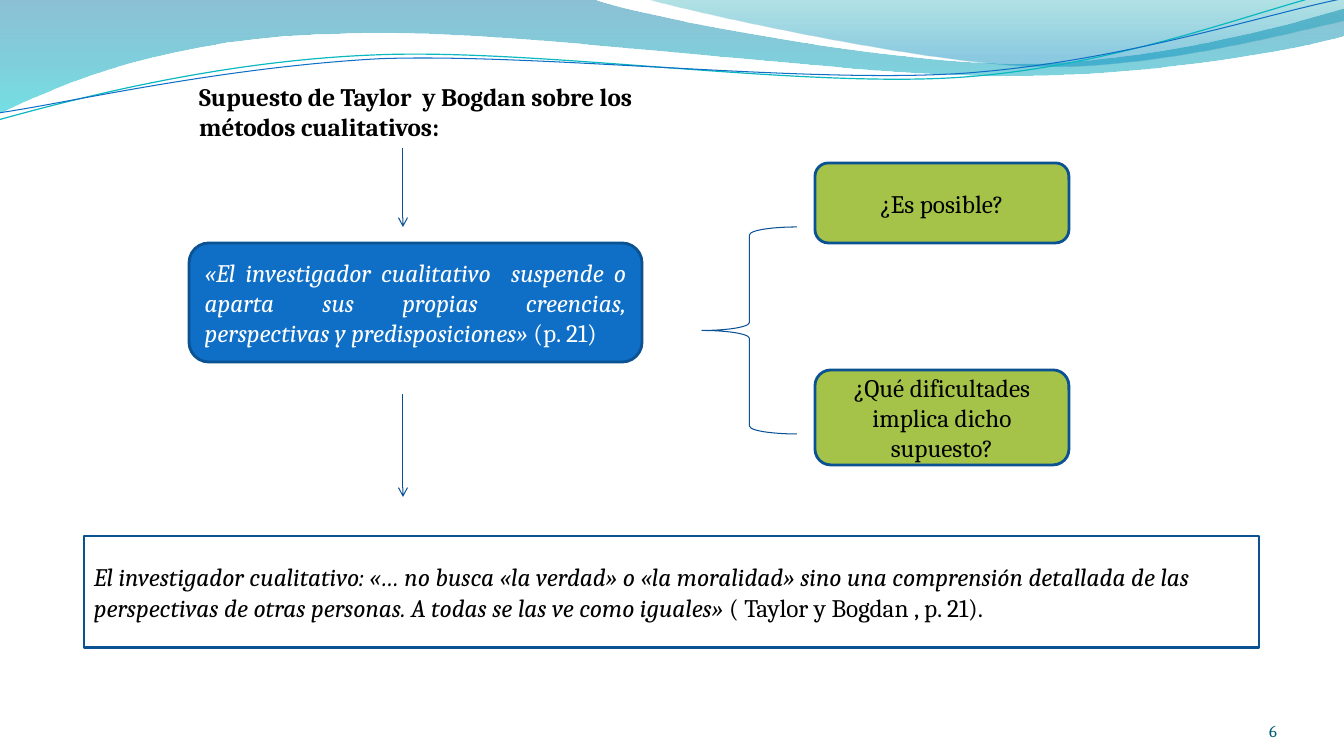
from pptx import Presentation
from pptx.dml.color import RGBColor
from pptx.enum.shapes import MSO_CONNECTOR, MSO_SHAPE
from pptx.enum.text import MSO_ANCHOR, MSO_AUTO_SIZE, PP_ALIGN
from pptx.oxml.ns import qn
from pptx.util import Pt
from lxml.etree import SubElement

PX = 914400 / 100.8
FONT = "Cambria"
BLACK = RGBColor(0x00, 0x00, 0x00)
WHITE = RGBColor(0xFF, 0xFF, 0xFF)
BLUE = RGBColor(0x0F, 0x6F, 0xC6)
GREEN = RGBColor(0xA5, 0xC2, 0x49)
BORDER = RGBColor(0x0B, 0x52, 0x92)
ARROW = RGBColor(0x09, 0x52, 0x95)
TEAL = RGBColor(0x0A, 0xB8, 0xBF)
NUMBER = RGBColor(0x04, 0x5D, 0x75)
WAVE_TOP = RGBColor(0x00, 0x74, 0xA1)
WAVE_BOTTOM = RGBColor(0x00, 0xC6, 0xCF)
CREST_TOP = RGBColor(0x00, 0xA1, 0xA9)
CREST_BOTTOM = RGBColor(0x00, 0x8B, 0xBF)


def emu(*lengths):
    return [round(length * PX) for length in lengths]


def write_runs(paragraph, texts, color, size=18, bold=False, italics=(False,)):
    for text, italic in zip(texts, italics):
        run = paragraph.add_run()
        run.text = text
        run.font.name = FONT
        run.font.size = Pt(size)
        run.font.bold = bold
        run.font.italic = italic
        run.font.color.rgb = color


presentation = Presentation()
presentation.slide_width, presentation.slide_height = emu(1344, 756)
slide = presentation.slides.add_slide(presentation.slide_layouts[5])
shapes = slide.shapes

waves = [
    ((0, 0), [(592, -1), (639, 17, 892, 64, 1019, 64), (1147, 64, 1288, 26, 1344, 9),
              (1346, 36), (1321, 44, 1169, 77, 1002, 76), (836, 76, 513, 28, 346, 34),
              (173, 36, 61, 84, -1, 114)],
     [(0, WAVE_TOP, 45), (1, WAVE_BOTTOM, 55)], None),
    ((644, -1), [(684, 11, 916, 62, 1033, 66), (1150, 70, 1292, 32, 1344, 21), (1344, 0)],
     [(0, CREST_TOP, 30), (0.8, CREST_BOTTOM, 45)], None),
    ((-3, 88), [(64, 73, 213, 40, 372, 41), (532, 41, 794, 94, 957, 91),
                (1118, 88, 1264, 36, 1344, 22)], None, (TEAL, 0.85)),
    ((-2, 81), [(63, 75, 220, 46, 381, 45), (541, 47, 801, 90, 962, 87),
                (1123, 83, 1266, 42, 1347, 30)], None, (BLUE, 0.75)),
]
for start, segments, stops, line in waves:
    points = [segment[i:i + 2] for segment in segments for i in range(0, len(segment), 2)]
    builder = shapes.build_freeform(*emu(*start))
    builder.add_line_segments([emu(*point) for point in points], close=stops is not None)
    wave = builder.convert_to_shape()
    wave.shadow.inherit = False
    steps = iter(list(wave.element.spPr.iter(qn("a:lnTo"))))
    for segment in segments:
        step = next(steps)
        if len(segment) == 6:
            curve = step.makeelement(qn("a:cubicBezTo"))
            step.addprevious(curve)
            for part in (step, next(steps), next(steps)):
                curve.append(part[0])
                part.getparent().remove(part)
    if stops:
        wave.fill.gradient()
        wave.fill.gradient_angle = 270
        for stop, (position, color, opacity) in zip(wave.fill.gradient_stops, stops):
            stop.position = position
            stop.color.rgb = color
        for element, (position, color, opacity) in zip(
                wave.element.spPr.iter(qn("a:srgbClr")), stops):
            SubElement(element, qn("a:alpha"), val=str(opacity * 1000))
        wave.line.fill.background()
    else:
        wave.rotation = 357.3
        wave.fill.background()
        wave.line.color.rgb = line[0]
        wave.line.width = Pt(line[1])

title = shapes.title
title.left, title.top, title.width, title.height = emu(189, 76, 469, 72)
title.text_frame.word_wrap = True
title.text_frame.auto_size = MSO_AUTO_SIZE.NONE
title.text_frame.vertical_anchor = MSO_ANCHOR.TOP
title.text_frame.paragraphs[0].alignment = PP_ALIGN.LEFT
write_runs(title.text_frame.paragraphs[0],
           ["Supuesto de Taylor  y Bogdan sobre los métodos cualitativos:"], BLACK, bold=True)

boxes = [
    (MSO_SHAPE.ROUNDED_RECTANGLE, (189, 243, 453, 119), BLUE, WHITE, PP_ALIGN.JUSTIFY,
     ["«El investigador cualitativo  suspende o aparta sus propias creencias, "
      "perspectivas y predisposiciones» ", "(p. 21)"], (True, False)),
    (MSO_SHAPE.ROUNDED_RECTANGLE, (815, 163, 254, 80), GREEN, BLACK, PP_ALIGN.CENTER,
     ["¿Es posible?"], (False,)),
    (MSO_SHAPE.ROUNDED_RECTANGLE, (815, 370, 254, 95), GREEN, BLACK, PP_ALIGN.CENTER,
     ["¿Qué dificultades implica dicho supuesto?"], (False,)),
    (MSO_SHAPE.RECTANGLE, (84, 536, 1175, 112), WHITE, BLACK, PP_ALIGN.LEFT,
     ["El investigador cualitativo: «… no busca «la verdad» o «la moralidad» sino una "
      "comprensión detallada de las perspectivas de otras personas. A todas se las ve "
      "como iguales» ", "( Taylor y Bogdan , p. 21)."], (True, False)),
]
for kind, place, fill, color, alignment, texts, italics in boxes:
    box = shapes.add_shape(kind, *emu(*place))
    box.shadow.inherit = False
    box.fill.solid()
    box.fill.fore_color.rgb = fill
    box.line.color.rgb = BORDER
    box.line.width = Pt(2)
    box.text_frame.word_wrap = True
    box.text_frame.vertical_anchor = MSO_ANCHOR.MIDDLE
    paragraph = box.text_frame.paragraphs[0]
    paragraph.alignment = alignment
    write_runs(paragraph, texts, color, italics=italics)

brace = shapes.add_shape(MSO_SHAPE.LEFT_BRACE, *emu(702, 227, 95, 207))
brace.shadow.inherit = False
brace.fill.background()
brace.line.color.rgb = ARROW
brace.line.width = Pt(0.75)

for top, bottom in [(148, 227), (394, 497)]:
    arrow = shapes.add_connector(MSO_CONNECTOR.STRAIGHT, *emu(403, top, 403, bottom))
    arrow.line.color.rgb = ARROW
    arrow.line.width = Pt(0.75)
    SubElement(arrow.line._get_or_add_ln(), qn("a:tailEnd"), type="arrow")
    SubElement(arrow.element.spPr, qn("a:effectLst"))

number = shapes.add_textbox(*emu(1165, 701, 112, 40))
frame = number.text_frame
frame.word_wrap = True
frame.margin_left = frame.margin_top = frame.margin_right = frame.margin_bottom = 0
frame.vertical_anchor = MSO_ANCHOR.BOTTOM
frame.paragraphs[0].alignment = PP_ALIGN.RIGHT
write_runs(frame.paragraphs[0], ["6"], NUMBER, size=12)

presentation.save("out.pptx")
